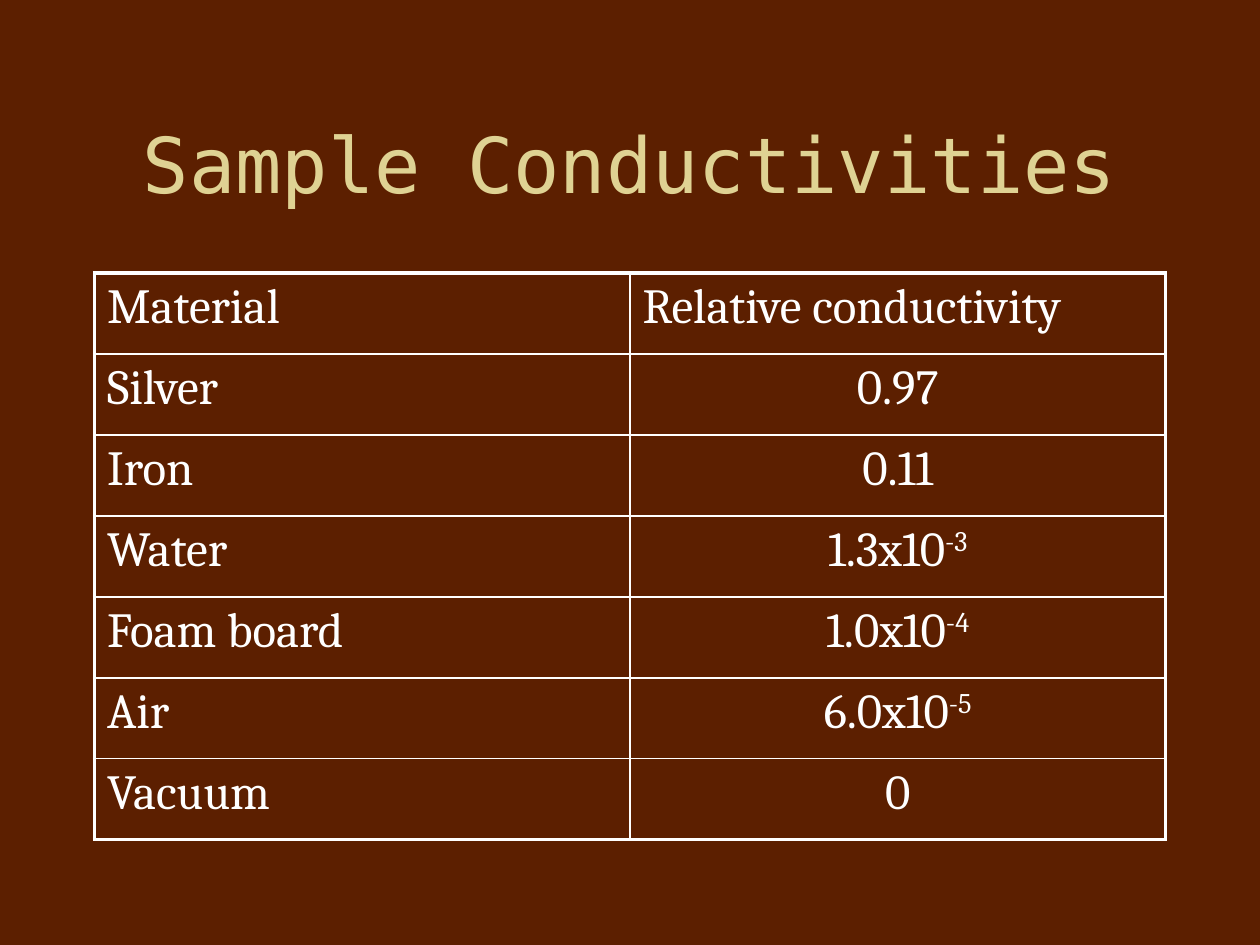
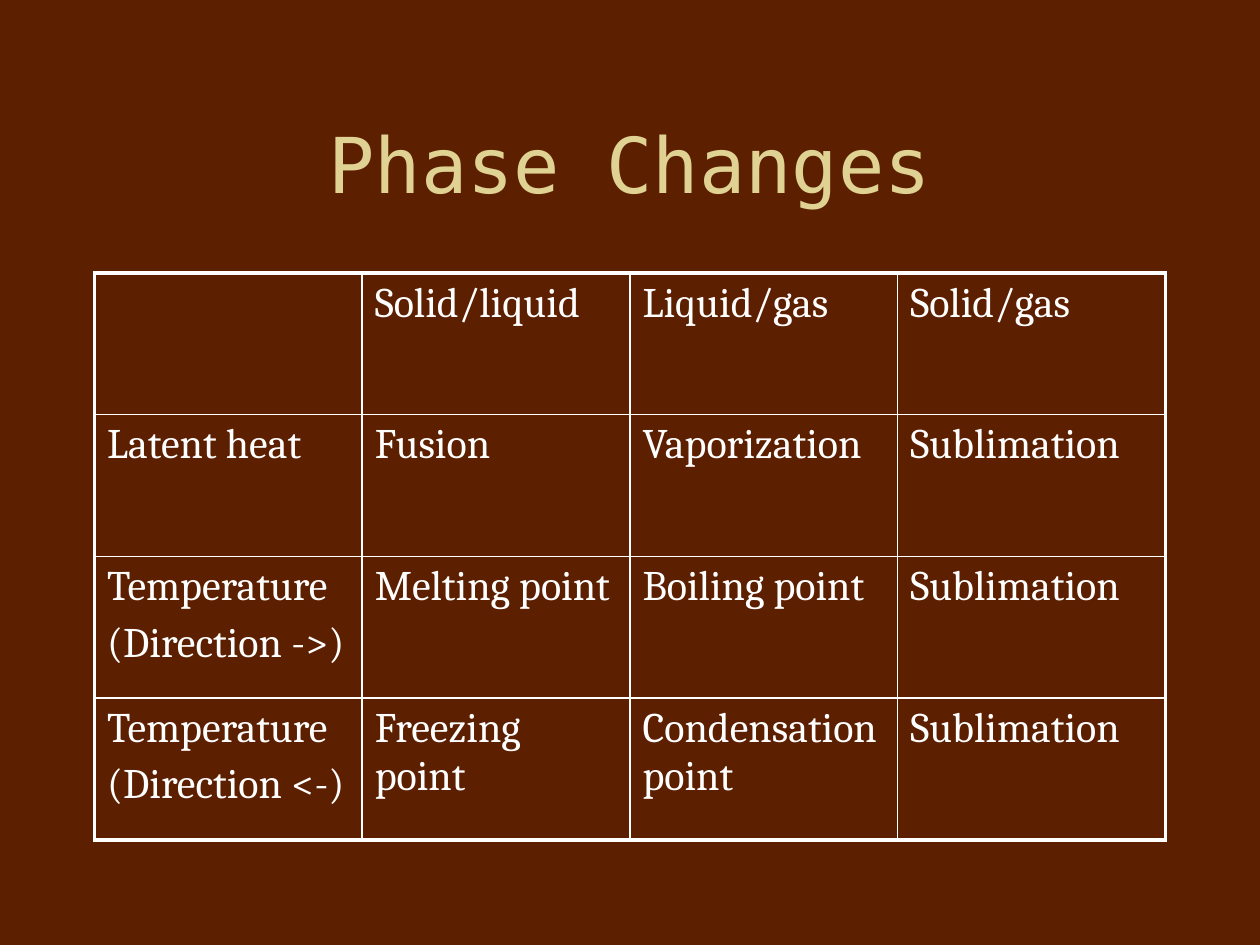
from lxml import etree
from pptx import Presentation
from pptx.dml.color import RGBColor
from pptx.enum.text import MSO_ANCHOR, PP_ALIGN
from pptx.oxml.ns import qn
from pptx.util import Emu, Pt

CENTER, LEFT = PP_ALIGN.CENTER, PP_ALIGN.LEFT
MIDDLE = MSO_ANCHOR.MIDDLE

# Shared look
BACKGROUND, TITLE_COLOR, WHITE = "5C1F00", "DFD293", "FFFFFF"
TITLE_FONT, BODY_FONT = "DejaVu Sans Mono", "Cambria"
OUTER_LINE, INNER_LINE = 2.25, 1
TITLE_ONLY = 5

# Boxes in px: left, top, width, height
SLIDE_W, SLIDE_H = 960, 720
TITLE_BOX = (72, 64, 816, 120)
TABLE_BOX = (72, 208, 816, 432)

# "^" starts a superscript, a line break starts a new paragraph
CONDUCTIVITIES = [
    ["Material", "Relative conductivity"],
    ["Silver", "0.97"],
    ["Iron", "0.11"],
    ["Water", "1.3x10^-3"],
    ["Foam board", "1.0x10^-4"],
    ["Air", "6.0x10^-5"],
    ["Vacuum", "0"],
]
PHASE_CHANGES = [
    ["", "Solid/liquid", "Liquid/gas", "Solid/gas"],
    ["Latent heat", "Fusion", "Vaporization", "Sublimation"],
    ["Temperature\n(Direction ->)", "Melting point", "Boiling point", "Sublimation"],
    ["Temperature\n(Direction <-)", "Freezing point", "Condensation point", "Sublimation"],
]


def px(n):
    return Emu(n * 9525)


def rgb(color):
    return RGBColor.from_string(color)


def set_font(p, name, size, color):
    p.font.name, p.font.size = name, Pt(size)
    p.font.color.rgb = rgb(color)


def set_borders(cell, widths):
    """Draw the cell's lines; widths gives left, right, top, bottom in points."""
    tc_pr = cell._tc.get_or_add_tcPr()
    for side, width in zip("LRTB", widths):
        ln = etree.SubElement(tc_pr, qn(f"a:ln{side}"), w=str(Pt(width)))
        fill = etree.SubElement(ln, qn("a:solidFill"))
        etree.SubElement(fill, qn("a:srgbClr"), val=WHITE)


def fill_cell(cell, text, size, align):
    tf = cell.text_frame
    for i, line in enumerate(text.split("\n")):
        p = tf.paragraphs[0] if i == 0 else tf.add_paragraph()
        base, _, power = line.partition("^")
        if base:
            p.add_run().text = base
        if power:
            r = p.add_run()
            r.text = power
            r._r.get_or_add_rPr().set("baseline", "30000")
        p.alignment = align
        p.space_before = Pt(0.2 * size)
        set_font(p, BODY_FONT, size, WHITE)


def add_title(slide, text, box):
    title = slide.shapes.title
    title.left, title.top, title.width, title.height = map(px, box)
    tf = title.text_frame
    tf.text = text
    tf.vertical_anchor = MIDDLE
    p = tf.paragraphs[0]
    p.alignment = CENTER
    set_font(p, TITLE_FONT, 44, TITLE_COLOR)


def add_grid(slide, rows, size, box, center_values):
    n_rows, n_cols = len(rows), len(rows[0])
    table = slide.shapes.add_table(n_rows, n_cols, *map(px, box)).table
    table.first_row = table.horz_banding = False
    for i, row in enumerate(rows):
        for j, text in enumerate(row):
            cell = table.cell(i, j)
            edges = (j == 0, j == n_cols - 1, i == 0, i == n_rows - 1)
            set_borders(cell, [OUTER_LINE if e else INNER_LINE for e in edges])
            cell.fill.background()
            centered = center_values and i > 0 and j > 0
            fill_cell(cell, text, size, CENTER if centered else LEFT)


def add_table_slide(prs, title, rows, size, center_values=False):
    s = prs.slides.add_slide(prs.slide_layouts[TITLE_ONLY])
    add_title(s, title, TITLE_BOX)
    add_grid(s, rows, size, TABLE_BOX, center_values)


def main():
    prs = Presentation()
    prs.slide_width, prs.slide_height = px(SLIDE_W), px(SLIDE_H)
    fill = prs.slide_master.background.fill
    fill.solid()
    fill.fore_color.rgb = rgb(BACKGROUND)

    add_table_slide(prs, "Sample Conductivities", CONDUCTIVITIES, 28, center_values=True)
    add_table_slide(prs, "Phase Changes", PHASE_CHANGES, 24)
    prs.save("out.pptx")


if __name__ == "__main__":
    main()
